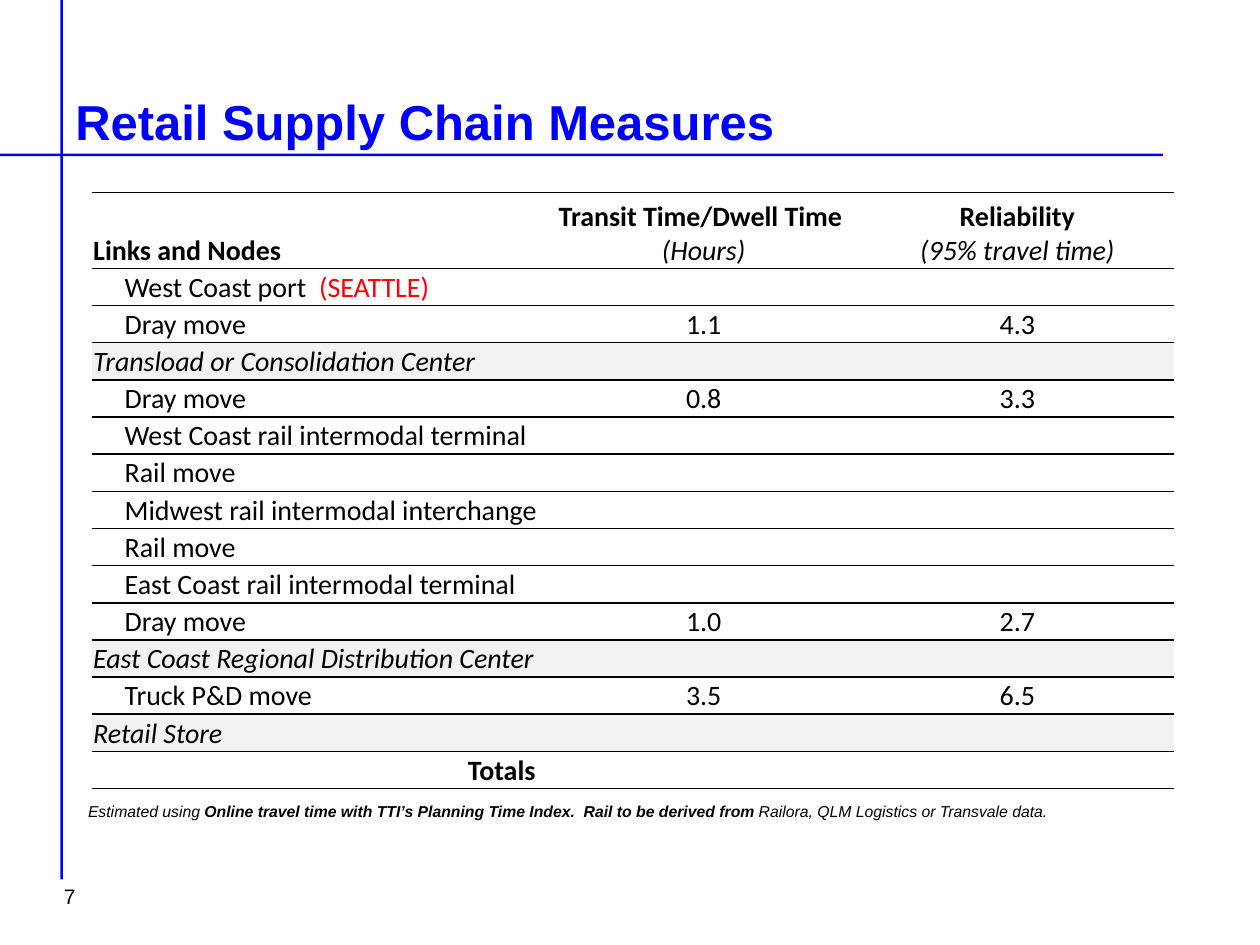
from dataclasses import dataclass

from lxml import etree
from pptx import Presentation, util as u
from pptx.dml.color import RGBColor
from pptx.enum import shapes, text
from pptx.oxml.ns import qn

COLUMNS, ROWS = 100, 75
SLIDE_WIDTH, SLIDE_HEIGHT = u.Inches(10), u.Inches(7.5)


@dataclass(frozen=True)
class Theme:
    accent: str = "0000FF"
    ink: str = "000000"
    alert: str = "FF0000"
    band: str = "F2F2F2"
    heading_font: str = "Arial"
    table_font: str = "Calibri"
    title_size: int = 28
    table_size: int = 16
    number_size: int = 12
    note_size: int = 9
    thin: float = 0.5
    thick: float = 1


THEME = Theme()
PLAIN_TABLE = "{2D5ABB26-0587-4C30-8999-92F81FD0307C}"
HEADINGS = [
    ("Links and Nodes", None),
    ("Transit Time/Dwell Time ", "(Hours)"),
    ("Reliability", "(95% travel time)"),
]
SUPPLY_CHAIN = [
    ("link", "West Coast port  ", "", ""),
    ("link", "Dray move", "1.1", "4.3"),
    ("node", "Transload or Consolidation Center", "", ""),
    ("link", "Dray move", "0.8", "3.3"),
    ("link", "West Coast rail intermodal terminal", "", ""),
    ("link", "Rail move", "", ""),
    ("link", "Midwest rail intermodal interchange", "", ""),
    ("link", "Rail move", "", ""),
    ("link", "East Coast rail intermodal terminal", "", ""),
    ("link", "Dray move", "1.0", "2.7"),
    ("node", "East Coast Regional Distribution Center", "", ""),
    ("link", "Truck P&D move", "3.5", "6.5"),
    ("node", "Retail Store", "", ""),
    ("total", "Totals", "", ""),
]


def across(columns):
    return round(SLIDE_WIDTH * columns / COLUMNS)


def down(rows):
    return round(SLIDE_HEIGHT * rows / ROWS)


def place(left, top, width, height):
    return across(left), down(top), across(width), down(height)


def style(run, font, size, color=THEME.ink, bold=False, italic=False):
    run.font.name = font
    run.font.size = u.Pt(size)
    run.font.color.rgb = RGBColor.from_string(color)
    run.font.bold = bold
    run.font.italic = italic


def add_rule(slide, *area):
    rule = slide.shapes.add_shape(shapes.MSO_SHAPE.RECTANGLE, *place(*area))
    rule.shadow.inherit = False
    rule.fill.solid()
    rule.fill.fore_color.rgb = RGBColor.from_string(THEME.accent)
    rule.line.fill.background()


def add_label(slide, area, anchor, size, pieces):
    frame = slide.shapes.add_textbox(*place(*area)).text_frame
    frame.word_wrap = True
    frame.vertical_anchor = anchor
    for wording, look in pieces:
        run = frame.paragraphs[0].add_run()
        run.text = wording
        style(run, THEME.heading_font, size, **look)


def add_border(cell, side, width):
    line = etree.SubElement(cell._tc.get_or_add_tcPr(), qn(f"a:{side}"), w=str(u.Pt(width)))
    fill = etree.SubElement(line, qn("a:solidFill"))
    etree.SubElement(fill, qn("a:srgbClr"), val=THEME.ink)


def finish_cell(cell, above, below, band):
    cell.margin_left = cell.margin_right = cell.margin_top = u.Inches(0.01)
    cell.margin_bottom = 0
    cell.vertical_anchor = text.MSO_ANCHOR.MIDDLE
    add_border(cell, "lnT", above)
    add_border(cell, "lnB", below)
    if band:
        cell.fill.solid()
        cell.fill.fore_color.rgb = RGBColor.from_string(THEME.band)
    else:
        cell.fill.background()


def write(paragraph, wording, **look):
    if not wording:
        paragraph._p.get_or_add_endParaRPr().set("sz", str(THEME.table_size * 100))
        return
    run = paragraph.add_run()
    run.text = wording
    style(run, THEME.table_font, THEME.table_size, **look)


def fill_headings(cells):
    for cell, (heading, unit) in zip(cells, HEADINGS):
        cell.vertical_anchor = text.MSO_ANCHOR.BOTTOM
        frame = cell.text_frame
        write(frame.paragraphs[0], heading, bold=True)
        if unit:
            write(frame.add_paragraph(), unit, italic=True)
            for paragraph in frame.paragraphs:
                paragraph.alignment = text.PP_ALIGN.CENTER


def fill_stage(cells, kind, stage, *measures):
    stage_cell, *measure_cells = cells
    label = stage_cell.text_frame.paragraphs[0]
    write(label, stage, bold=kind == "total", italic=kind == "node")
    if kind == "link":
        label._p.get_or_add_pPr().set("marL", str(u.Inches(0.25)))
    if kind == "total":
        label.alignment = text.PP_ALIGN.RIGHT
        stage_cell.margin_right = u.Inches(0.09)
    for cell, measure in zip(measure_cells, measures):
        paragraph = cell.text_frame.paragraphs[0]
        paragraph.alignment = text.PP_ALIGN.CENTER
        write(paragraph, measure)
    return label


def add_measures(slide):
    row_count = len(SUPPLY_CHAIN) + 1
    height, heading_height = 47.3, 6
    frame = slide.shapes.add_table(row_count, len(HEADINGS), *place(7.3, 15.3, 85.8, height))
    table = frame.table
    table.first_row = table.horz_banding = False
    table._tbl.tblPr.find(qn("a:tableStyleId")).text = PLAIN_TABLE
    for column, width in zip(table.columns, (36.1, 24.9, 24.9)):
        column.width = across(width)
    stage_height = (height - heading_height) / len(SUPPLY_CHAIN)
    for index, row in enumerate(table.rows):
        row.height = down(stage_height if index else heading_height)

    kinds = ["heading"] + [stage[0] for stage in SUPPLY_CHAIN]
    thin_edges = {0, 1, row_count - 1}
    edges = [THEME.thin if i in thin_edges else THEME.thick for i in range(row_count + 1)]
    for index, row in enumerate(table.rows):
        for cell in row.cells:
            finish_cell(cell, edges[index], edges[index + 1], kinds[index] == "node")

    heading_row, *stage_rows = table.rows
    fill_headings(heading_row.cells)
    labels = [fill_stage(row.cells, *stage) for row, stage in zip(stage_rows, SUPPLY_CHAIN)]
    write(labels[0], "(SEATTLE)", color=THEME.alert)


def main():
    deck = Presentation()
    deck.slide_width, deck.slide_height = SLIDE_WIDTH, SLIDE_HEIGHT
    slide = deck.slides.add_slide(deck.slide_layouts[6])
    add_rule(slide, 0, 12.2, 92.3, 0.2)
    add_rule(slide, 4.8, 0, 0.2, 69.8)
    add_label(slide, (5, 0, 90, 12.4), text.MSO_ANCHOR.BOTTOM, THEME.title_size,
              [("Retail Supply Chain Measures", {"color": THEME.accent, "bold": True})])
    add_label(slide, (4.1, 69.1, 7.3, 4), text.MSO_ANCHOR.MIDDLE, THEME.number_size, [("7", {})])
    add_measures(slide)
    add_label(slide, (6, 63.1, 87.1, 2.5), text.MSO_ANCHOR.TOP, THEME.note_size, [
        ("Estimated using ", {"italic": True}),
        ("Online travel time with TTI’s Planning Time Index.  Rail to be derived from ",
         {"bold": True, "italic": True}),
        ("Railora, QLM Logistics or Transvale data.", {"italic": True}),
    ])
    deck.save("out.pptx")


if __name__ == "__main__":
    main()
